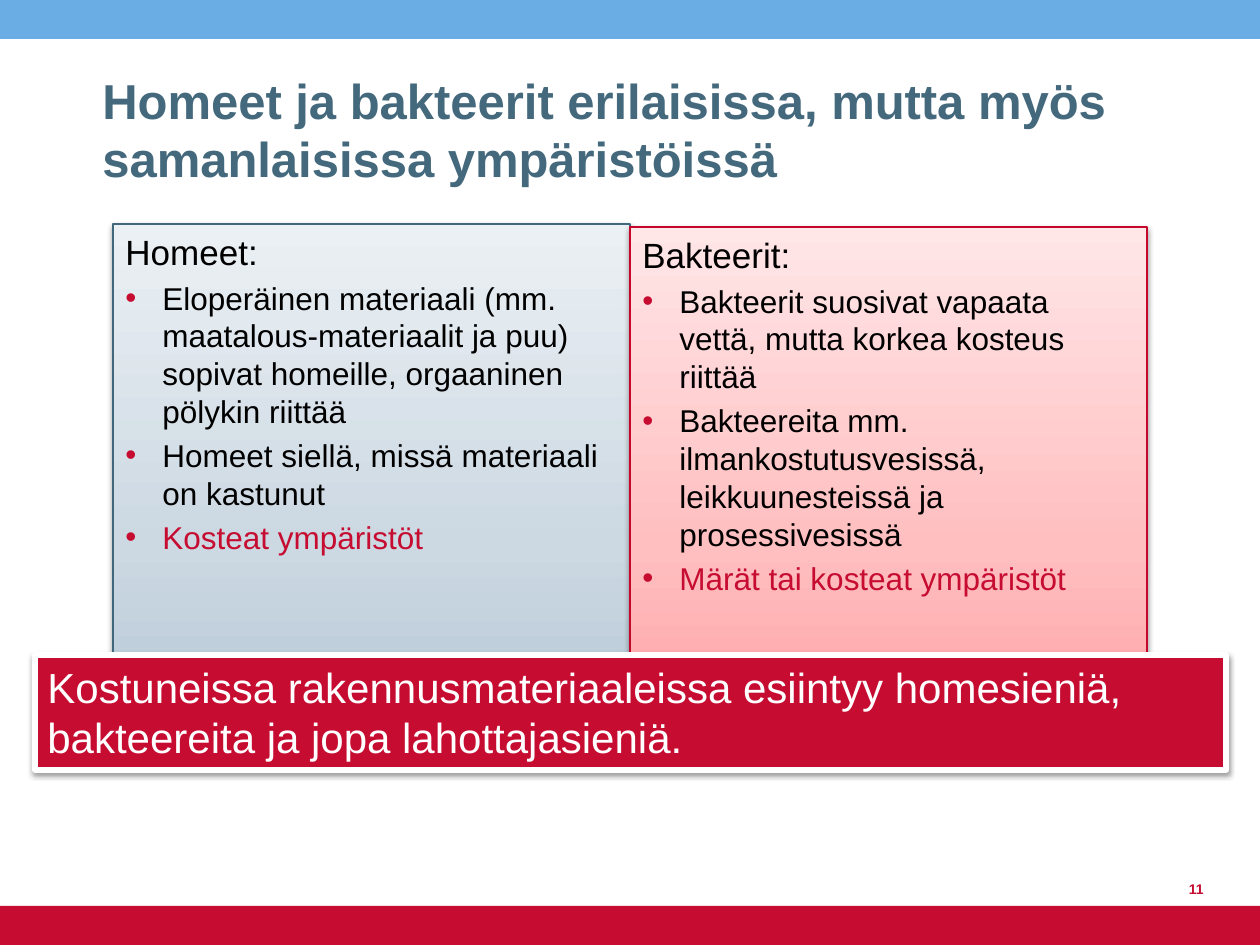
from copy import deepcopy

from lxml import etree
from pptx import Presentation
from pptx.dml.color import RGBColor
from pptx.enum import shapes, text
from pptx.oxml import parse_xml
from pptx.oxml.ns import nsdecls, qn
from pptx.util import Pt

PX = 914400 / 126
C = {
    "blue": "6AADE4", "red": "C60C30", "slate": "44697D",
    "black": "000000", "white": "FFFFFF",
}
SHADOW = (
    f'<a:effectLst {nsdecls("a")}><a:outerShdw blurRad="40000" dist="20000" '
    'dir="5400000" rotWithShape="0"><a:srgbClr val="000000">'
    '<a:alpha val="38000"/></a:srgbClr></a:outerShdw></a:effectLst>'
)


def add_box(kind, *bounds):
    x, y, w, h = [round(v * PX) for v in bounds]
    if kind == "text":
        sp = s.shapes.add_textbox(x, y, w, h)
    else:
        sp = s.shapes.add_shape(shapes.MSO_SHAPE.RECTANGLE, x, y, w, h)
        sp.shadow.inherit = False
    sp.text_frame.word_wrap = True
    sp.text_frame.vertical_anchor = text.MSO_ANCHOR.TOP
    return sp


def write(p, words, size, color, bold=False, align=text.PP_ALIGN.LEFT):
    p.alignment = align
    r = p.add_run()
    r.text = words
    r.font.name = "Arial"
    r.font.size = Pt(size)
    r.font.bold = bold
    r.font.color.rgb = RGBColor.from_string(C[color])


prs = Presentation()
prs.slide_width = round(1260 * PX)
prs.slide_height = round(945 * PX)
s = prs.slides.add_slide(prs.slide_layouts[6])

for y, color in [(0, "blue"), (906, "red")]:
    bar = add_box("rect", 0, y, 1260, 39)
    bar.fill.solid()
    bar.fill.fore_color.rgb = RGBColor.from_string(C[color])
    bar.line.fill.background()

title = add_box("text", 90, 45, 1032, 149)
title.text_frame.vertical_anchor = text.MSO_ANCHOR.BOTTOM
write(title.text_frame.paragraphs[0],
      "Homeet ja bakteerit erilaisissa, mutta myös samanlaisissa ympäristöissä",
      28, "slate", True)

columns = [
    (113, 224, 499, ["B5C9D7", "CCD8E2", "EBF0F4"], "41677C", "Homeet:", [
        "Eloperäinen materiaali (mm. maatalous-materiaalit ja puu) "
        "sopivat homeille, orgaaninen pölykin riittää",
        "Homeet siellä, missä materiaali on kastunut",
        "Kosteat ympäristöt",
    ]),
    (630, 227, 498, ["FFA3A6", "FFBEC0", "FFE6E7"], "C6072C", "Bakteerit:", [
        "Bakteerit suosivat vapaata vettä, mutta korkea kosteus riittää",
        "Bakteereita mm. ilmankostutusvesissä, leikkuunesteissä ja prosessivesissä",
        "Märät tai kosteat ympäristöt",
    ]),
]
for x, y, h, shades, edge, heading, points in columns:
    sp = add_box("rect", x, y, 517, h)
    sp.fill.gradient()
    sp.fill.gradient_angle = 90
    stops = sp._element.spPr.find(".//" + qn("a:gsLst"))
    stops.append(deepcopy(stops[-1]))
    for stop, position, shade in zip(sp.fill.gradient_stops, [0, 0.35, 1], shades):
        stop.position = position
        stop.color.rgb = RGBColor.from_string(shade)
    sp.line.color.rgb = RGBColor.from_string(edge)
    sp.line.width = Pt(0.75)
    sp._element.spPr.replace(sp._element.spPr.find(qn("a:effectLst")), parse_xml(SHADOW))

    tf = sp.text_frame
    write(tf.paragraphs[0], heading, 20, "black")
    for point in points:
        p = tf.add_paragraph()
        pPr = p._p.get_or_add_pPr()
        pPr.set("marL", str(round(37 * PX)))
        pPr.set("indent", str(round(-37 * PX)))
        bullet_color = etree.SubElement(pPr, qn("a:buClr"))
        etree.SubElement(bullet_color, qn("a:srgbClr"), val=C["red"])
        etree.SubElement(pPr, qn("a:buFont"), typeface="Arial")
        etree.SubElement(pPr, qn("a:buChar"), char="•")
        p.space_before = Pt(3.6)
        write(p, point, 18, "red" if point == points[-1] else "black")

banner = add_box("rect", 35, 655, 1191, 115)
banner.fill.solid()
banner.fill.fore_color.rgb = RGBColor.from_string(C["red"])
banner.line.color.rgb = RGBColor.from_string(C["white"])
banner.line.width = Pt(3)
spPr = banner._element.spPr
spPr.replace(spPr.find(qn("a:effectLst")), parse_xml(SHADOW))
banner.text_frame.auto_size = text.MSO_AUTO_SIZE.SHAPE_TO_FIT_TEXT
write(banner.text_frame.paragraphs[0],
      "Kostuneissa rakennusmateriaaleissa esiintyy homesieniä, "
      "bakteereita ja jopa lahottajasieniä.", 24, "white")

number = add_box("text", 1147, 854, 69, 50)
number.text_frame.vertical_anchor = text.MSO_ANCHOR.BOTTOM
write(number.text_frame.paragraphs[0], "11", 8, "red", True, text.PP_ALIGN.RIGHT)

prs.save("out.pptx")
